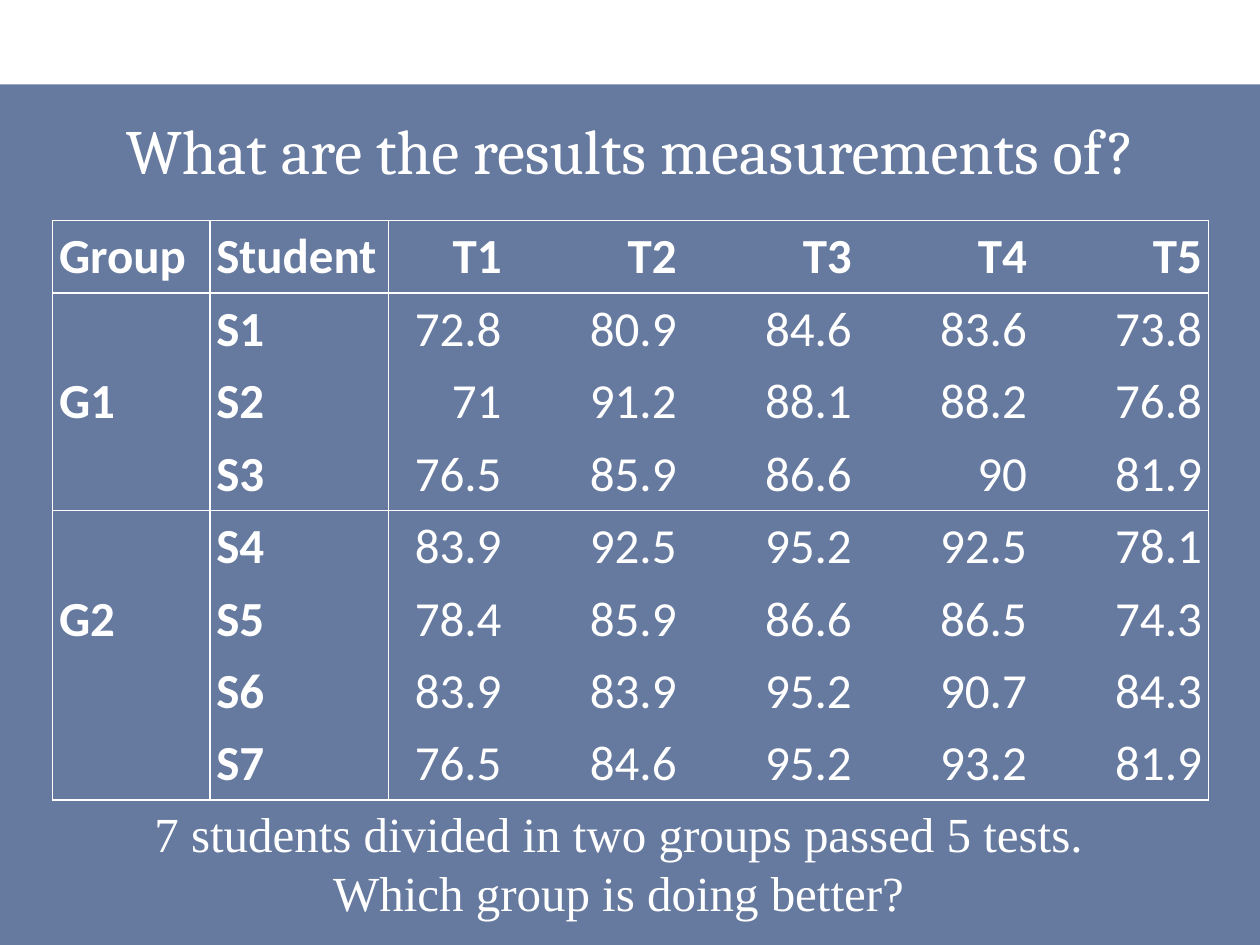
from pptx import Presentation, util as u
from pptx.dml.color import RGBColor
from pptx.enum import shapes, text
from pptx.oxml import parse_xml
from pptx.oxml.ns import nsdecls, qn
from lxml import etree

# Content
TITLE = "What are the results measurements of?"
HEAD = ["Group", "Student", "T1", "T2", "T3", "T4", "T5"]
ROWS = [
    ["", "S1", "72.8", "80.9", "84.6", "83.6", "73.8"],
    ["G1", "S2", "71", "91.2", "88.1", "88.2", "76.8"],
    ["", "S3", "76.5", "85.9", "86.6", "90", "81.9"],
    ["", "S4", "83.9", "92.5", "95.2", "92.5", "78.1"],
    ["G2", "S5", "78.4", "85.9", "86.6", "86.5", "74.3"],
    ["", "S6", "83.9", "83.9", "95.2", "90.7", "84.3"],
    ["", "S7", "76.5", "84.6", "95.2", "93.2", "81.9"],
]
NOTE = ["7 students divided in two groups passed 5 tests.",
        "Which group is doing better?"]

# Blocks ruled off in the table: first and last index of each
ROW_BLOCKS = [(0, 0), (1, 3), (4, 7)]
COL_BLOCKS = [(0, 0), (1, 1), (2, 6)]
COLS = [3.17, 3.6, 2.41] + [3.53] * 4
ROW_H = 1.46

THEME = dict(ink="FFFFFF", band="002060", alpha=60, rule=1,
             title=36, body=28, head="Cambria", cell="Calibri", note="Times New Roman")
LEFT, MID = text.PP_ALIGN.LEFT, text.PP_ALIGN.CENTER
RIGHT = text.PP_ALIGN.RIGHT
NO_STYLE = "{2D5ABB26-0587-4C30-8999-92F81FD0307C}"


def write(frame, lines, font, size=THEME["body"], bold=False, align=LEFT):
    for i, line in enumerate(lines):
        para = frame.paragraphs[0] if i == 0 else frame.add_paragraph()
        para.alignment = align
        run = para.add_run()
        run.text = line
        run.font.name, run.font.size, run.font.bold = font, u.Pt(size), bold
        run.font.color.rgb = RGBColor.from_string(THEME["ink"])


def rule(cell, drawn):
    """Draw the named cell edges and clear the others."""
    ink = f'<a:solidFill><a:srgbClr val="{THEME["ink"]}"/></a:solidFill>'
    for side in "LRTB":
        fill = ink if side in drawn else "<a:noFill/>"
        cell._tc.get_or_add_tcPr().append(parse_xml(
            f'<a:ln{side} {nsdecls("a")} w="{u.Pt(THEME["rule"])}">{fill}</a:ln{side}>'))


def edges(i, blocks, names):
    return [name for k, name in enumerate(names) if any(b[k] == i for b in blocks)]


def main():
    deck = Presentation()
    deck.slide_width, deck.slide_height = u.Cm(25.4), u.Cm(19.05)
    slide = deck.slides.add_slide(deck.slide_layouts[5])

    # Background band, behind everything
    top = u.Cm(1.7)
    band = slide.shapes.add_shape(shapes.MSO_SHAPE.RECTANGLE, 0, top,
                                  deck.slide_width, deck.slide_height - top)
    band.shadow.inherit = False
    band.fill.solid()
    band.fill.fore_color.rgb = RGBColor.from_string(THEME["band"])
    band.line.fill.background()
    tint = band._element.spPr.find(qn("a:solidFill"))[0]
    etree.SubElement(tint, qn("a:alpha")).set("val", str(THEME["alpha"] * 1000))
    slide.shapes._spTree.insert(2, band._element)

    # Title
    title = slide.shapes.title
    title.left, title.top = u.Cm(0.64), u.Cm(2.12)
    title.width, title.height = u.Cm(24.13), u.Cm(2.12)
    title.text_frame.vertical_anchor = text.MSO_ANCHOR.MIDDLE
    title.text_frame.margin_bottom = u.Cm(0.45)
    write(title.text_frame, [TITLE], THEME["head"], size=THEME["title"], align=MID)

    # Results table
    data = [HEAD] + ROWS
    grid = slide.shapes.add_table(len(data), len(COLS), u.Cm(1.06), u.Cm(4.45),
                                  u.Cm(sum(COLS)), u.Cm(ROW_H * len(data))).table
    grid.first_row = grid.horz_banding = False
    grid._tbl.tblPr.find(qn("a:tableStyleId")).text = NO_STYLE
    for col, wide in zip(grid.columns, COLS):
        col.width = u.Cm(wide)
    for r, row in enumerate(data):
        grid.rows[r].height = u.Cm(ROW_H)
        for c, word in enumerate(row):
            cell = grid.cell(r, c)
            cell.margin_left = cell.margin_right = u.Cm(0.13)
            cell.margin_top = cell.margin_bottom = u.Cm(0.12)
            cell.vertical_anchor = text.MSO_ANCHOR.BOTTOM
            rule(cell, edges(c, COL_BLOCKS, "LR") + edges(r, ROW_BLOCKS, "TB"))
            cell.fill.background()
            if word:
                write(cell.text_frame, [word], THEME["cell"], bold=r == 0 or c < 2,
                      align=LEFT if c < 2 else RIGHT)

    # Closing question
    box = slide.shapes.add_textbox(u.Cm(2.87), u.Cm(16.08), u.Cm(19.66), u.Cm(2.64))
    box.text_frame.word_wrap = False
    box.text_frame.margin_left, box.text_frame.margin_right = 0, u.Cm(0.46)
    write(box.text_frame, NOTE, THEME["note"], align=MID)

    deck.save("out.pptx")


if __name__ == "__main__":
    main()
